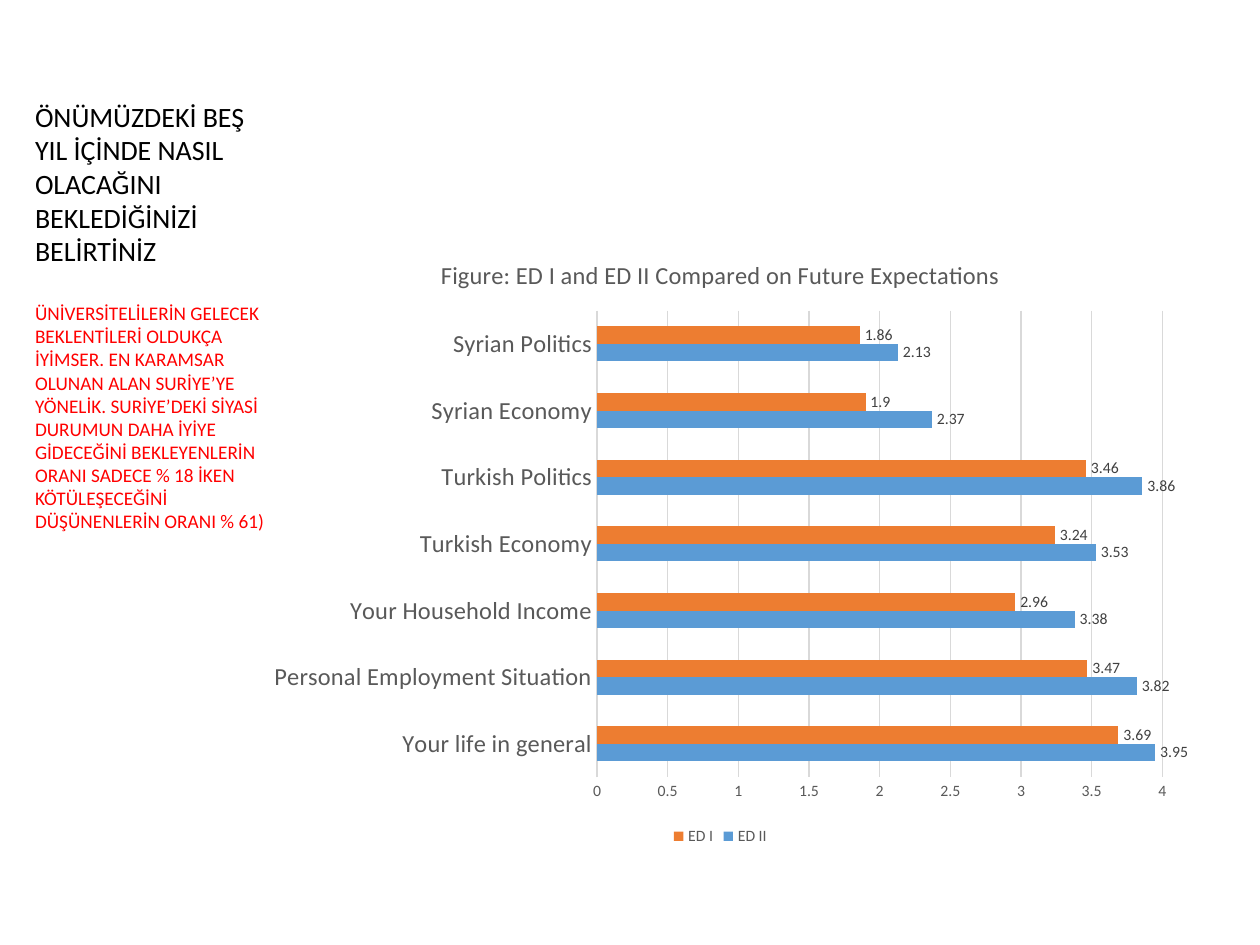
from pptx import Presentation
from pptx.chart.data import CategoryChartData as ChartData
from pptx.dml.color import RGBColor
from pptx.enum.chart import XL_CHART_TYPE as Chart
from pptx.enum.chart import XL_LABEL_POSITION as Label
from pptx.enum.chart import XL_LEGEND_POSITION as Legend
from pptx.enum.chart import XL_TICK_MARK as Tick
from pptx.util import Inches, Pt

FACE = "Calibri"
GREY, PALE = "595959", "D9D9D9"
NOTES = [
    ("ÖNÜMÜZDEKİ BEŞ YIL İÇİNDE NASIL OLACAĞINI BEKLEDİĞİNİZİ BELİRTİNİZ",
     16, "000000", 0),
    ("ÜNİVERSİTELİLERİN GELECEK BEKLENTİLERİ OLDUKÇA İYİMSER. EN KARAMSAR "
     "OLUNAN ALAN SURİYE’YE YÖNELİK. SURİYE’DEKİ SİYASİ DURUMUN DAHA İYİYE "
     "GİDECEĞİNİ BEKLEYENLERİN ORANI SADECE % 18 İKEN KÖTÜLEŞECEĞİNİ "
     "DÜŞÜNENLERİN ORANI % 61)", 11, "FF0000", 19.5),
]
TITLE = "Figure: ED I and ED II Compared on Future Expectations"
TOPICS = ["Your life in general", "Personal Employment Situation",
          "Your Household Income", "Turkish Economy", "Turkish Politics",
          "Syrian Economy", "Syrian Politics"]
SERIES = [
    ("ED II", "5B9BD5", [3.95, 3.82, 3.38, 3.53, 3.86, 2.37, 2.13]),
    ("ED I", "ED7D31", [3.69, 3.47, 2.96, 3.24, 3.46, 1.9, 1.86]),
]


def paint(target, color):
    target.rgb = RGBColor.from_string(color)


def style(font, size, color):
    font.name, font.size, font.bold = FACE, Pt(size), False
    paint(font.color, color)


def rule(line):
    line.width = Pt(0.75)
    paint(line.color, PALE)


def add_notes(slide, *box):
    frame = slide.shapes.add_textbox(*map(Inches, box)).text_frame
    frame.word_wrap = True
    for i, (text, size, color, gap) in enumerate(NOTES):
        para = frame.add_paragraph() if i else frame.paragraphs[0]
        para.text = text
        if gap:
            para.space_before = Pt(gap)
        style(para.runs[0].font, size, color)


def style_axes(chart):
    topics, scale = chart.category_axis, chart.value_axis
    for axis, size in ((topics, 14), (scale, 9)):
        axis.major_tick_mark = axis.minor_tick_mark = Tick.NONE
        style(axis.tick_labels.font, size, GREY)
    topics.has_major_gridlines = False
    rule(topics.format.line)
    scale.minimum_scale, scale.maximum_scale = 0, 4
    scale.major_unit = 0.5
    scale.has_major_gridlines = True
    rule(scale.major_gridlines.format.line)
    scale.format.line.fill.background()


def style_bars(plot):
    plot.gap_width, plot.overlap = 182, 0
    plot.vary_by_categories = False
    for bars, (_, color, _) in zip(plot.series, SERIES):
        bars.format.fill.solid()
        paint(bars.format.fill.fore_color, color)
        labels = bars.data_labels
        labels.show_value = True
        labels.position = Label.OUTSIDE_END
        style(labels.font, 9, "404040")


def add_bars(slide, *box):
    data = ChartData()
    data.categories = TOPICS
    for name, _, values in SERIES:
        data.add_series(name, values)
    chart = slide.shapes.add_chart(
        Chart.BAR_CLUSTERED, *map(Inches, box), data).chart
    style(chart.font, 10, "000000")
    chart.has_title = True
    title = chart.chart_title
    title.include_in_layout = False
    para = title.text_frame.paragraphs[0]
    para.text = TITLE
    style(para.runs[0].font, 14, GREY)
    chart.has_legend = True
    chart.legend.position = Legend.BOTTOM
    chart.legend.include_in_layout = False
    style(chart.legend.font, 9, GREY)
    style_axes(chart)
    style_bars(chart.plots[0])


def main():
    deck = Presentation()
    deck.slide_width, deck.slide_height = Inches(10), Inches(7.5)
    slide = deck.slides.add_slide(deck.slide_layouts[6])
    add_notes(slide, 0.18, 0.74, 2.16, 3.57)
    add_bars(slide, 2.03, 1.86, 7.4, 4.89)
    deck.save("out.pptx")


if __name__ == "__main__":
    main()
